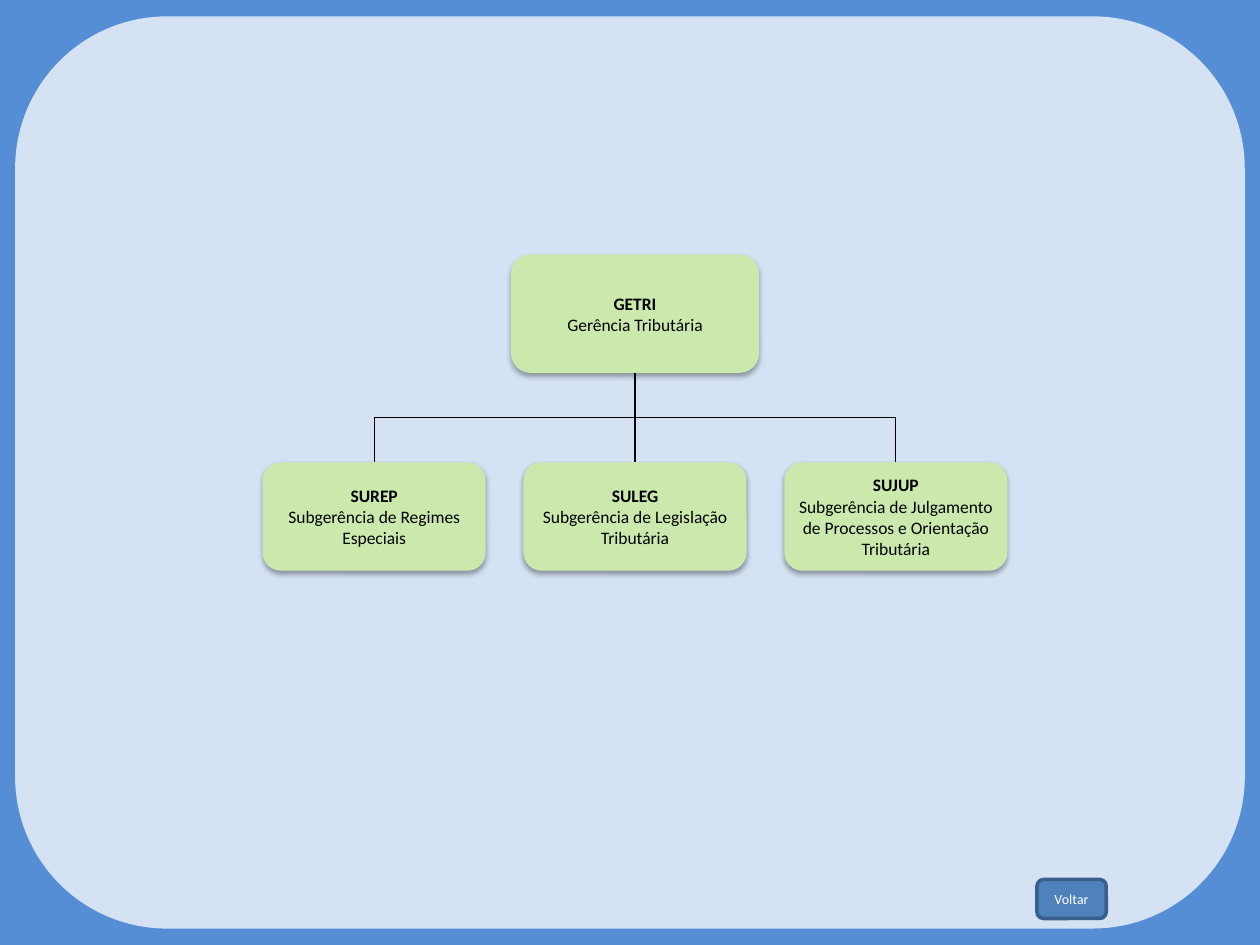
"""Build the organisation chart slide of the tax management department."""
import pptx
import pptx.dml.color
import pptx.enum.shapes
import pptx.enum.text
import pptx.oxml
import pptx.oxml.ns
import pptx.util
from pptx.util import Inches

THEME = {
    "font": "Calibri",
    "colors": {
        "background": "558ED5",
        "panel": "D4E2F4",
        "node": "CCE9AD",
        "button": "4F81BD",
        "button_line": "3A5F8C",
        "dark": "000000",
        "light": "FFFFFF",
    },
    "sizes": {"node": 10, "button": 8},
}
SHADOW = (
    f'<a:outerShdw {pptx.oxml.ns.nsdecls("a")} blurRad="40000" dist="23000" dir="5400000" rotWithShape="0">'
    '<a:srgbClr val="000000"><a:alpha val="35000"/></a:srgbClr></a:outerShdw>'
)


def color(name):
    return pptx.dml.color.RGBColor.from_string(THEME["colors"][name])


def add_box(left, top, width, height, fill, lines=(), size="node", ink="dark", inset=None):
    shape = slide.shapes.add_shape(
        pptx.enum.shapes.MSO_SHAPE.ROUNDED_RECTANGLE,
        Inches(left), Inches(top), Inches(width), Inches(height),
    )
    shape.shadow.inherit = False
    shape.fill.solid()
    shape.fill.fore_color.rgb = color(fill)
    shape.line.fill.background()
    frame = shape.text_frame
    frame.word_wrap = True
    frame.vertical_anchor = pptx.enum.text.MSO_ANCHOR.MIDDLE
    if inset is not None:
        for side in ("left", "top", "right", "bottom"):
            setattr(frame, f"margin_{side}", Inches(inset))
    for index, text in enumerate(lines):
        paragraph = frame.add_paragraph() if index else frame.paragraphs[0]
        paragraph.alignment = pptx.enum.text.PP_ALIGN.CENTER
        run = paragraph.add_run()
        run.text = text
        run.font.color.rgb = color(ink)
        formats = {
            "name": THEME["font"],
            "size": pptx.util.Pt(THEME["sizes"][size]),
            "bold": len(lines) > 1 and index == 0,
        }
        for attribute, value in formats.items():
            setattr(run.font, attribute, value)
    if fill == "node":
        effects = shape.element.spPr.find(pptx.oxml.ns.qn("a:effectLst"))
        effects.append(pptx.oxml.parse_xml(SHADOW))
    return shape


presentation = pptx.Presentation()
presentation.slide_width = Inches(10)
presentation.slide_height = Inches(7.5)
slide = presentation.slides.add_slide(presentation.slide_layouts[6])
slide.background.fill.solid()
slide.background.fill.fore_color.rgb = color("background")

add_box(0.12, 0.13, 9.76, 7.24, "panel")

center, step = 5.04, 2.07
manager_top, manager_width, manager_height = 2.02, 1.97, 0.94
unit_top, unit_width, unit_height = 3.67, 1.77, 0.86
manager_bottom = manager_top + manager_height
drop = unit_top - manager_bottom

manager = add_box(
    center - manager_width / 2, manager_top, manager_width, manager_height,
    "node", ("GETRI", "Gerência Tributária"),
)

units = [
    (-1, "SUREP", "Subgerência de Regimes Especiais"),
    (0, "SULEG", "Subgerência de Legislação Tributária"),
    (1, "SUJUP", "Subgerência de Julgamento de Processos e Orientação Tributária"),
]
for column, acronym, name in units:
    unit_center = center + column * step
    unit = add_box(
        unit_center - unit_width / 2, unit_top, unit_width, unit_height,
        "node", (acronym, name), inset=0.04,
    )
    connector = slide.shapes.add_connector(
        pptx.enum.shapes.MSO_CONNECTOR.ELBOW,
        Inches(center), Inches(manager_bottom), Inches(unit_center), Inches(unit_top),
    )
    connector.begin_connect(manager, 2)
    connector.end_connect(unit, 0)
    spread = abs(column) * step
    turned_frame = {
        "left": Inches((center + unit_center - drop) / 2),
        "top": Inches((manager_bottom + unit_top - spread) / 2),
        "width": Inches(drop),
        "height": Inches(spread),
    }
    for attribute, value in turned_frame.items():
        setattr(connector, attribute, value)
    properties = connector.element.spPr
    transform = properties.find(pptx.oxml.ns.qn("a:xfrm"))
    transform.set("rot", str((90 if column < 0 else 270) * 60000))
    transform.set("flipH", "0" if column < 0 else "1")
    connector.line.color.rgb = color("dark")
    connector.line.width = pptx.util.Pt(0.75)
    properties.append(pptx.oxml.parse_xml(f'<a:effectLst {pptx.oxml.ns.nsdecls("a")}/>'))

button = add_box(8.23, 6.98, 0.55, 0.31, "button", ("Voltar",), size="button", ink="light")
button.line.color.rgb = color("button_line")
button.line.width = pptx.util.Pt(2)

presentation.save("out.pptx")
